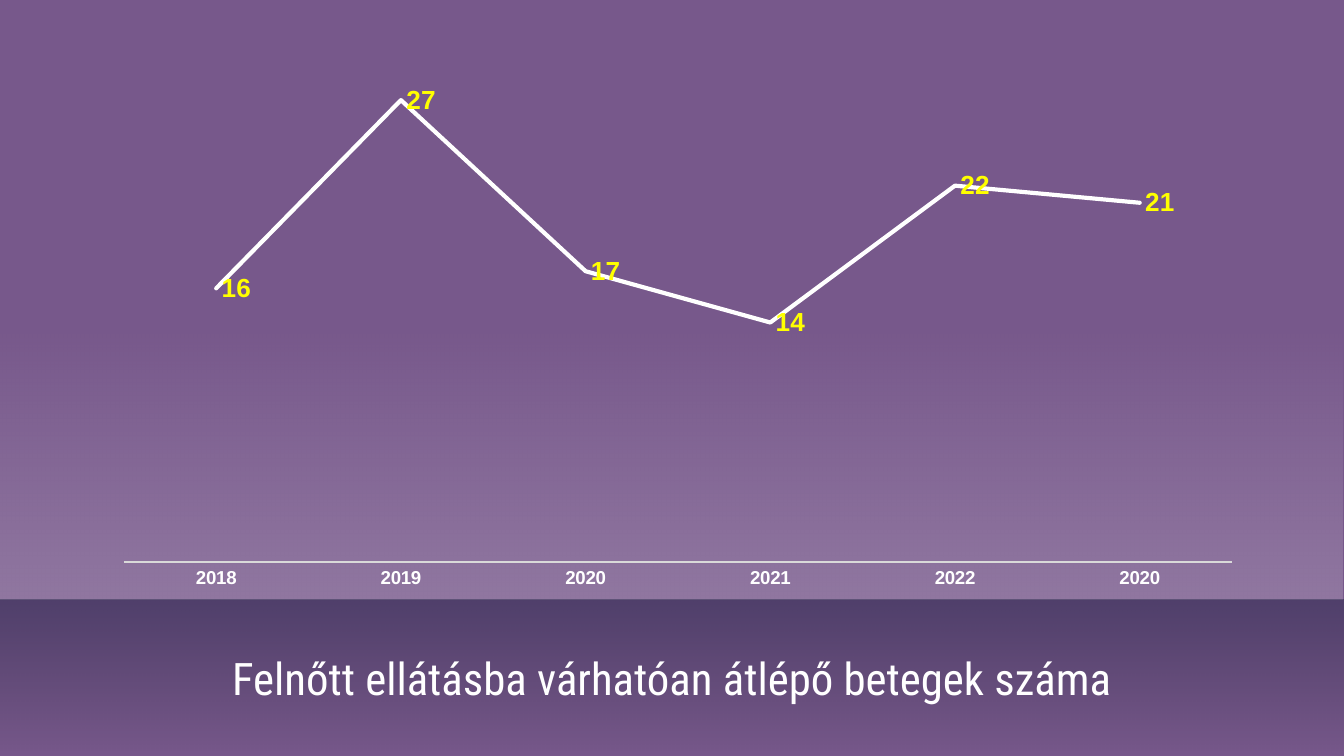
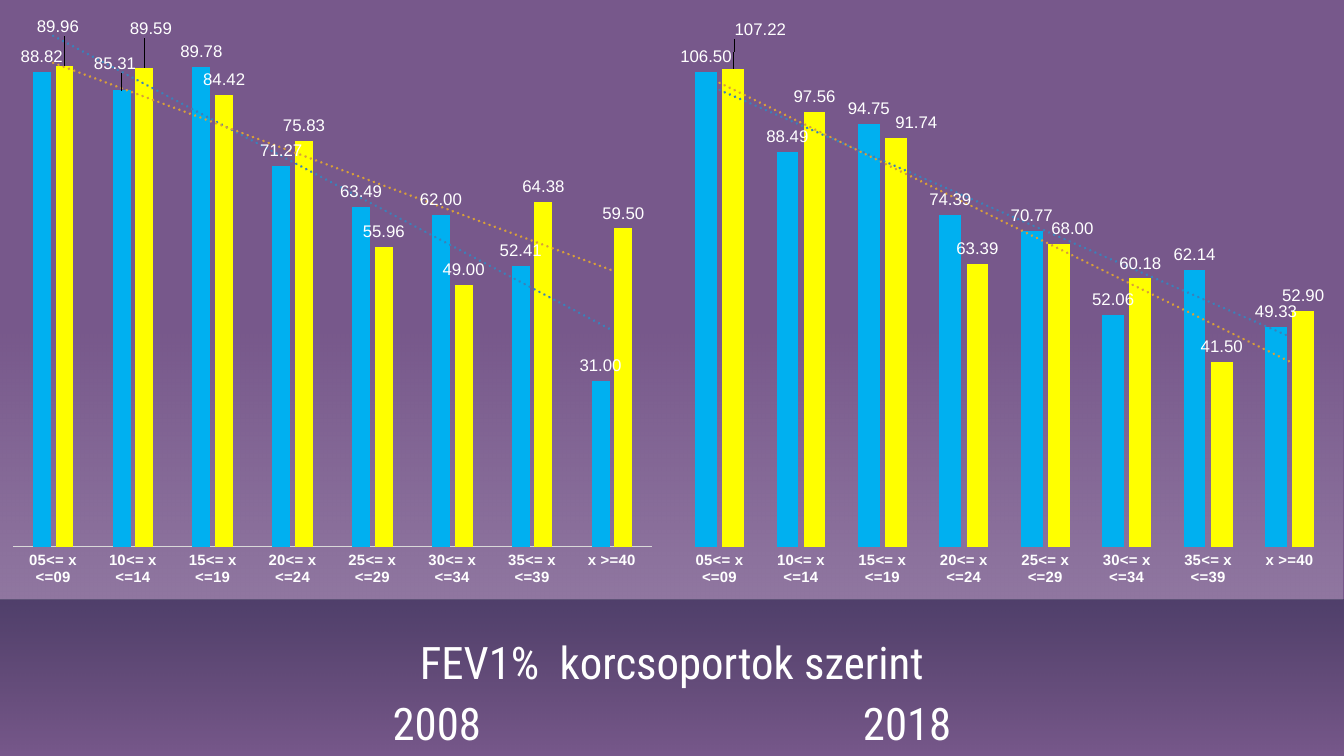
"""Build two slides of patient charts over a shared purple band design."""
import pptx
import pptx.chart.data
import pptx.dml.color
import pptx.enum.chart
import pptx.enum.shapes
import pptx.enum.text
import pptx.oxml
import pptx.oxml.ns
import pptx.util

Inches = pptx.util.Inches
Pt = pptx.util.Pt
RGB = pptx.dml.color.RGBColor
KIND = pptx.enum.chart.XL_CHART_TYPE
SPOT = pptx.enum.chart.XL_LABEL_POSITION

PURPLE = RGB(0x77, 0x58, 0x8B)
NAVY = RGB(0x02, 0x0F, 0x2B)
INK = RGB(0x01, 0x0C, 0x16)
WHITE = RGB(0xFF, 0xFF, 0xFF)
BLACK = RGB(0, 0, 0)
GREY = RGB(0xD9, 0xD9, 0xD9)
YELLOW = RGB(0xFF, 0xFF, 0)
CYAN = RGB(0, 0xB0, 0xF0)
BLUE = RGB(0x3A, 0x81, 0xBA)
GOLD = RGB(0xD8, 0x9F, 0x39)

BANDS = [((0, 4.46, 10, 1.16), 0, (NAVY, INK), 34),
         ((-0.01, 2.42, 10, 2.04), 180, (WHITE, WHITE), 19)]
YEARS = ["2018", "2019", "2020", "2021", "2022", "2020"]
AGES = [f"{age:02}<= x <={age + 4:02}" for age in range(5, 40, 5)] + ["x >=40"]
LEAD = ('<c:ext uri="{CE6537A1-D6FC-4f65-9D91-7224C49458BB}" '
        'xmlns:c15="http://schemas.microsoft.com/office/drawing/2012/chart">'
        '<c15:showLeaderLines val="0"/></c:ext>')


def chart_xml(tag, body="", attrs=""):
    return pptx.oxml.parse_xml(
        f'<c:{tag} {pptx.oxml.ns.nsdecls("c", "a")} {attrs}>{body}</c:{tag}>')


def place_xml(**parts):
    body = "".join(f'<c:{key} val="{val}"/>' for key, val in parts.items())
    return chart_xml("layout", f"<c:manualLayout>{body}</c:manualLayout>")


class Deck:
    def __init__(self):
        self.file = pptx.Presentation()
        self.file.slide_width = Inches(10)
        self.file.slide_height = Inches(10) * 9 // 16
        self.layout = self.file.slide_layouts[2]
        fill = self.layout.background.fill
        fill.solid()
        fill.fore_color.rgb = PURPLE
        self.slide = None

    def page(self):
        self.slide = self.file.slides.add_slide(self.layout)
        title = self.slide.shapes.title._element
        title.getparent().remove(title)
        for band in BANDS:
            self.band(*band)

    def band(self, box, turn, colors, alpha):
        shapes = self.slide.shapes
        shape = shapes.add_shape(pptx.enum.shapes.MSO_SHAPE.RECTANGLE, *map(Inches, box))
        shape.rotation = turn
        shape.shadow.inherit = False
        shape.line.fill.background()
        shape.fill.gradient()
        shape.fill.gradient_angle = 270
        for stop, color in zip(shape.fill.gradient_stops, colors):
            stop.color.rgb = color
        tints = shape._element.spPr.iter(pptx.oxml.ns.qn("a:srgbClr"))
        for tint, part in zip(list(tints), (alpha, 0)):
            mark = pptx.oxml.parse_xml(
                f'<a:alpha {pptx.oxml.ns.nsdecls("a")} val="{part * 1000}"/>')
            tint.append(mark)
        shapes._spTree.insert(2, shape._element)

    def font(self, font, size, color, bold=False, name="Arial"):
        font.size = Pt(size)
        font.name = name
        font.bold = bold
        font.color.rgb = color

    def text(self, box, lines):
        body = self.slide.placeholders[1]
        body.left, body.top, body.width, body.height = map(Inches, box)
        frame = body.text_frame
        frame.word_wrap = True
        frame.auto_size = pptx.enum.text.MSO_AUTO_SIZE.NONE
        frame.vertical_anchor = pptx.enum.text.MSO_ANCHOR.MIDDLE
        frame.margin_left = frame.margin_right = 0
        frame.margin_top = frame.margin_bottom = 0
        for pos, line in enumerate(lines):
            para = frame.add_paragraph() if pos else frame.paragraphs[0]
            para.alignment = pptx.enum.text.PP_ALIGN.CENTER
            para.space_before = Pt(3.6 if pos else 0)
            run = para.add_run()
            run.text = line
            self.font(run.font, 24, WHITE, name="Roboto Condensed")

    def chart(self, kind, box, cats, rows, top, tall, size, rule, form="General"):
        data = pptx.chart.data.CategoryChartData(number_format=form)
        data.categories = cats
        for pos, row in enumerate(rows, 1):
            data.add_series(f"Series {pos}", row)
        chart = self.slide.shapes.add_chart(kind, *map(Inches, box), data).chart
        chart.has_legend = False
        chart.has_title = False
        self.font(chart.font, 10, BLACK)
        chart.plots[0].vary_by_categories = False
        area = chart._chartSpace.chart.plotArea
        for old in area.findall(pptx.oxml.ns.qn("c:layout")):
            area.remove(old)
        area.insert(0, place_xml(layoutTarget="inner", xMode="edge", yMode="edge",
                                 x=0.02, y=0.02, w=0.96, h=tall / box[3]))
        value = chart.value_axis
        value.minimum_scale = 0
        value.maximum_scale = top
        value.has_major_gridlines = False
        value.tick_labels.number_format = form
        value.tick_labels.number_format_is_linked = False
        value.visible = False
        axis = chart.category_axis
        axis.major_tick_mark = pptx.enum.chart.XL_TICK_MARK.NONE
        self.font(axis.tick_labels.font, size, WHITE, True)
        if rule:
            axis.format.line.color.rgb = GREY
            axis.format.line.width = Pt(0.75)
        else:
            axis.format.line.fill.background()
        return chart

    def label(self, row, size, color, bold, spot, form):
        labels = row.data_labels
        labels.show_value = True
        labels.position = spot
        labels.number_format = form
        labels.number_format_is_linked = False
        self.font(labels.font, size, color, bold)
        node = labels._element
        for lead in node.findall(pptx.oxml.ns.qn("c:showLeaderLines")):
            node.remove(lead)
        node.append(chart_xml("extLst", LEAD))

    def lines(self, box, cats, vals):
        chart = self.chart(KIND.LINE, box, cats, [vals], 30, 3.82, 10, True)
        row = chart.plots[0].series[0]
        row.smooth = False
        row.format.line.color.rgb = WHITE
        row.format.line.width = Pt(2.25)
        row.format.line._get_or_add_ln().set("cap", "rnd")
        self.label(row, 14, YELLOW, True, SPOT.RIGHT, "General")

    def bars(self, box, cats, rows, top, gap, lap, rule, moves):
        chart = self.chart(KIND.COLUMN_CLUSTERED, box, cats, rows, top, 3.98, 8, rule, "0.00")
        plot = chart.plots[0]
        plot.gap_width = gap
        plot.overlap = lap
        for pos, (row, color, trend) in enumerate(
                zip(plot.series, (CYAN, YELLOW), (BLUE, GOLD))):
            row.format.fill.solid()
            row.format.fill.fore_color.rgb = color
            row.invert_if_negative = False
            self.label(row, 9, WHITE, False, SPOT.OUTSIDE_END, "0.00")
            for (line, point), shift in moves.items():
                if line == pos:
                    self.move(row.points[point].data_label, *shift)
            self.trend(row, trend)

    def move(self, label, x, y):
        self.font(label.font, 9, WHITE)
        label.position = SPOT.OUTSIDE_END
        node = label._get_or_add_dLbl()
        node.insert(1, place_xml(x=x, y=y))
        node.insert(2, chart_xml("numFmt", attrs='formatCode="0.00" sourceLinked="0"'))

    def trend(self, row, color):
        line = (f'<c:spPr><a:ln w="{Pt(1.5)}" cap="rnd"><a:solidFill><a:srgbClr val="{color}"/>'
                '</a:solidFill><a:prstDash val="sysDot"/></a:ln></c:spPr>')
        tail = ('<c:trendlineType val="linear"/><c:dispRSqr val="0"/>'
                '<c:dispEq val="0"/>')
        cat = row._element.find(pptx.oxml.ns.qn("c:cat"))
        cat.addprevious(chart_xml("trendline", line + tail))


def main():
    deck = Deck()
    deck.page()
    deck.text((0.5, 4.46, 9, 1.16), ["Felnőtt ellátásba várhatóan átlépő betegek száma"])
    deck.lines((0.75, 0.28, 8.59, 4.18), YEARS, [16, 27, 17, 14, 22, 21])

    deck.page()
    deck.text((0.5, 4.67, 9, 0.96),
              ["FEV1%  korcsoportok szerint", "2008\t\t\t\t\t\t2018"])
    deck.bars((4.95, 0, 5.05, 4.45), AGES,
              [[106.5, 88.49, 94.75, 74.39, 70.77, 52.06, 62.14, 49.33],
               [107.22, 97.56, 91.74, 63.39, 68, 60.18, 41.5, 52.9]],
              120, 150, -25, False,
              {(1, 0): (0.04, -0.04), (1, 2): (0.03, 0), (1, 4): (0.02, 0)})
    deck.bars((0, 0, 4.95, 4.45), AGES,
              [[88.82, 85.31, 89.78, 71.27, 63.49, 62, 52.41, 31],
               [89.96, 89.59, 84.42, 75.83, 55.96, 49, 64.38, 59.5]],
              100, 219, -27, True,
              {(0, 1): (-0.01, -0.02), (1, 0): (-0.01, -0.04), (1, 1): (0.01, -0.04)})
    deck.file.save("out.pptx")


if __name__ == "__main__":
    main()
